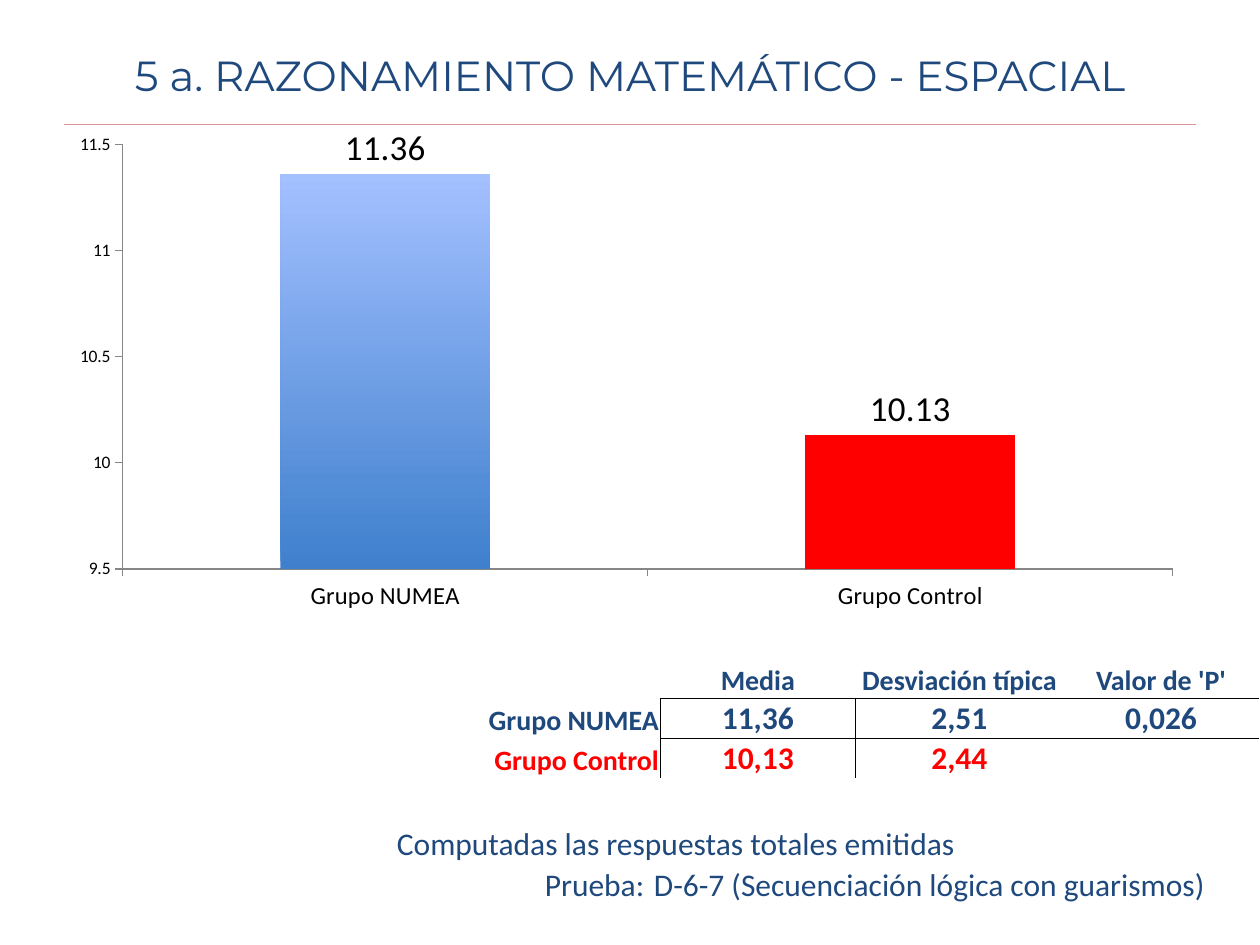
from dataclasses import dataclass

from lxml import etree
from pptx import Presentation
from pptx.chart.data import CategoryChartData
from pptx.dml.color import RGBColor
from pptx.enum.chart import XL_CHART_TYPE, XL_LABEL_POSITION, XL_TICK_MARK
from pptx.enum.shapes import MSO_CONNECTOR
from pptx.enum.text import MSO_ANCHOR, PP_ALIGN
from pptx.oxml import parse_xml
from pptx.oxml.ns import nsdecls, qn
from pptx.util import Inches, Pt

COLUMNS = XL_CHART_TYPE.COLUMN_CLUSTERED
OUTSIDE_END = XL_LABEL_POSITION.OUTSIDE_END
TICK_OUT, TICK_NONE = XL_TICK_MARK.OUTSIDE, XL_TICK_MARK.NONE
STRAIGHT = MSO_CONNECTOR.STRAIGHT
MIDDLE, BOTTOM = MSO_ANCHOR.MIDDLE, MSO_ANCHOR.BOTTOM
LEFT, CENTER, RIGHT = PP_ALIGN.LEFT, PP_ALIGN.CENTER, PP_ALIGN.RIGHT

NAVY, RED, BLACK, GRAY, ROSE = "1F497D", "FF0000", "000000", "868686", "D99694"
BAR_GRADIENT = ("3F80CD", "A3C0FF")
GROUPS = ("Grupo NUMEA", "Grupo Control")
PLAIN_TABLE = "{2D5ABB26-0587-4C30-8999-92F81FD0307C}"


@dataclass
class Entry:
    """One table cell: its text, format and the sides that carry a rule."""

    text: str = ""
    size: int = 16
    color: str = NAVY
    bold: bool = True
    align: PP_ALIGN = CENTER
    borders: str = ""


@dataclass
class Grid:
    """A table's place, column widths and row height in inches."""

    left: float
    top: float
    columns: tuple[float, ...]
    row_height: float
    rows: list[list[Entry]]


def rgb(value: str) -> RGBColor:
    """Turn a hex string into a colour."""
    return RGBColor.from_string(value)


def add_text(para, text: str, *, size=18, color=NAVY, bold=False, align=CENTER, font="Calibri"):
    """Write one formatted span into a paragraph."""
    para.alignment = align
    span = para.add_run()
    span.text = text
    span.font.name, span.font.size, span.font.bold = font, Pt(size), bold
    span.font.color.rgb = rgb(color)


def add_borders(cell, sides: str) -> None:
    """Rule the given sides of a cell, named by L, R, T and B in that order."""
    properties = cell._tc.get_or_add_tcPr()
    for index, side in enumerate(sides):
        properties.insert(index, parse_xml(
            f'<a:ln{side} {nsdecls("a")} w="6350"><a:solidFill>'
            f'<a:srgbClr val="{BLACK}"/></a:solidFill></a:ln{side}>'))


def fill_cell(cell, entry: Entry) -> None:
    """Format a cell and write its entry."""
    cell.margin_left = cell.margin_right = cell.margin_top = Inches(0.01)
    cell.margin_bottom = 0
    cell.vertical_anchor = BOTTOM
    cell.fill.background()
    add_borders(cell, entry.borders)
    para = cell.text_frame.paragraphs[0]
    if entry.text:
        add_text(para, entry.text, size=entry.size, color=entry.color,
                 bold=entry.bold, align=entry.align)
    else:
        etree.SubElement(para._p, qn("a:endParaRPr"), sz=str(entry.size * 100))


def add_grid(page, grid: Grid):
    """Draw an unstyled table."""
    count = len(grid.rows)
    table = page.shapes.add_table(
        count, len(grid.columns), Inches(grid.left), Inches(grid.top),
        Inches(sum(grid.columns)), Inches(grid.row_height * count)).table
    table.first_row = table.horz_banding = False
    table._tbl.tblPr.find(qn("a:tableStyleId")).text = PLAIN_TABLE
    for column, width in zip(table.columns, grid.columns):
        column.width = Inches(width)
    for row, entries in zip(table.rows, grid.rows):
        row.height = Inches(grid.row_height)
        for cell, entry in zip(row.cells, entries):
            fill_cell(cell, entry)
    return table


def group_row(name: str, values: list[str], color: str, top: str) -> list[Entry]:
    """Build the statistics row of one group."""
    numbers = [Entry(value, 18, color, borders=("" if index else "L") + top)
               for index, value in enumerate(values)]
    return [Entry(name, color=color, align=RIGHT, borders="R"), *numbers]


def add_statistics(page) -> None:
    """Draw the table of means, deviations and P value."""
    titles = ("Media", "Desviación típica", "Valor de 'P'")
    add_grid(page, Grid(1, 5.26, (4.24, 1.55, 1.65, 1.55), 0.28, [
        [Entry(), *(Entry(title, borders="B") for title in titles)],
        group_row(GROUPS[0], ["11,36", "2,51", "0,026"], NAVY, "T"),
        group_row(GROUPS[1], ["10,13", "2,44", ""], RED, ""),
    ]))


def add_notes_table(page) -> None:
    """Draw the table that names the test."""
    table = add_grid(page, Grid(3.14, 6.54, (2.04, 4.82), 0.32, [
        [Entry("Computadas las respuestas totales emitidas", 18, bold=False, align=LEFT), Entry()],
        [Entry("Prueba: ", 18, bold=False, align=RIGHT),
         Entry("D-6-7 (Secuenciación lógica con guarismos)", 18, bold=False, align=LEFT)],
        [Entry(), Entry()],
    ]))
    for row in (0, 2):
        table.cell(row, 0).merge(table.cell(row, 1))


def add_rule(page) -> None:
    """Draw the line below the title."""
    line = page.shapes.add_connector(STRAIGHT, Inches(0.51), Inches(0.99), Inches(9.49), Inches(0.99))
    line.line.color.rgb, line.line.width = rgb(ROSE), Pt(0.75)
    etree.SubElement(line._element.spPr, qn("a:effectLst"))


def format_axis(axis, size: int) -> None:
    """Give an axis its line, ticks and label size."""
    axis.has_major_gridlines = False
    axis.major_tick_mark, axis.minor_tick_mark = TICK_OUT, TICK_NONE
    axis.tick_labels.font.size = Pt(size)
    axis.format.line.color.rgb, axis.format.line.width = rgb(GRAY), Pt(0.75)


def add_means_chart(page) -> None:
    """Draw the column chart of both group means."""
    data = CategoryChartData()
    data.categories = GROUPS
    data.add_series("Series 1", (11.36, 10.13))
    chart = page.shapes.add_chart(
        COLUMNS, Inches(0.46), Inches(0.99), Inches(9.03), Inches(3.94), data).chart
    chart.has_legend = chart.has_title = False
    chart.font.name, chart.font.size = "Calibri", Pt(10)
    chart.font.color.rgb = rgb(BLACK)
    format_axis(chart.category_axis, 14)
    values = chart.value_axis
    format_axis(values, 10)
    values.minimum_scale, values.maximum_scale, values.major_unit = 9.5, 11.5, 0.5

    plot = chart.plots[0]
    plot.gap_width, plot.vary_by_categories = 150, False
    bars = plot.series[0]
    bars.invert_if_negative = False
    bars.format.fill.gradient()
    bars.format.fill.gradient_angle = 90
    for stop, color in zip(bars.format.fill.gradient_stops, BAR_GRADIENT):
        stop.color.rgb = rgb(color)
    control = bars.points[1].format.fill
    control.solid()
    control.fore_color.rgb = rgb(RED)
    labels = bars.data_labels
    labels.show_value, labels.position = True, OUTSIDE_END
    labels.font.size = Pt(20)

    area = chart._chartSpace.chart.plotArea
    for layout in area.findall(qn("c:layout")):
        area.remove(layout)
    shares = "".join(f'<c:{key} val="{share}"/>' for key, share in
                     (("x", 0.057), ("y", 0.04), ("w", 0.923), ("h", 0.855)))
    area.insert(0, parse_xml(
        f'<c:layout {nsdecls("c")}><c:manualLayout><c:layoutTarget val="inner"/>'
        f'<c:xMode val="edge"/><c:yMode val="edge"/>{shares}</c:manualLayout></c:layout>'))


def main() -> None:
    """Build and save the deck."""
    deck = Presentation()
    deck.slide_width, deck.slide_height = Inches(10), Inches(7.5)
    page = deck.slides.add_slide(deck.slide_layouts[5])
    title = page.shapes.title
    title.left, title.top, title.width, title.height = 0, Inches(0.29), Inches(10), Inches(0.61)
    title.text_frame.vertical_anchor = MIDDLE
    add_text(title.text_frame.paragraphs[0], "5 a. RAZONAMIENTO MATEMÁTICO - ESPACIAL",
             size=24, font="Montserrat")
    add_rule(page)
    add_notes_table(page)
    add_statistics(page)
    add_means_chart(page)
    deck.save("out.pptx")


if __name__ == "__main__":
    main()
